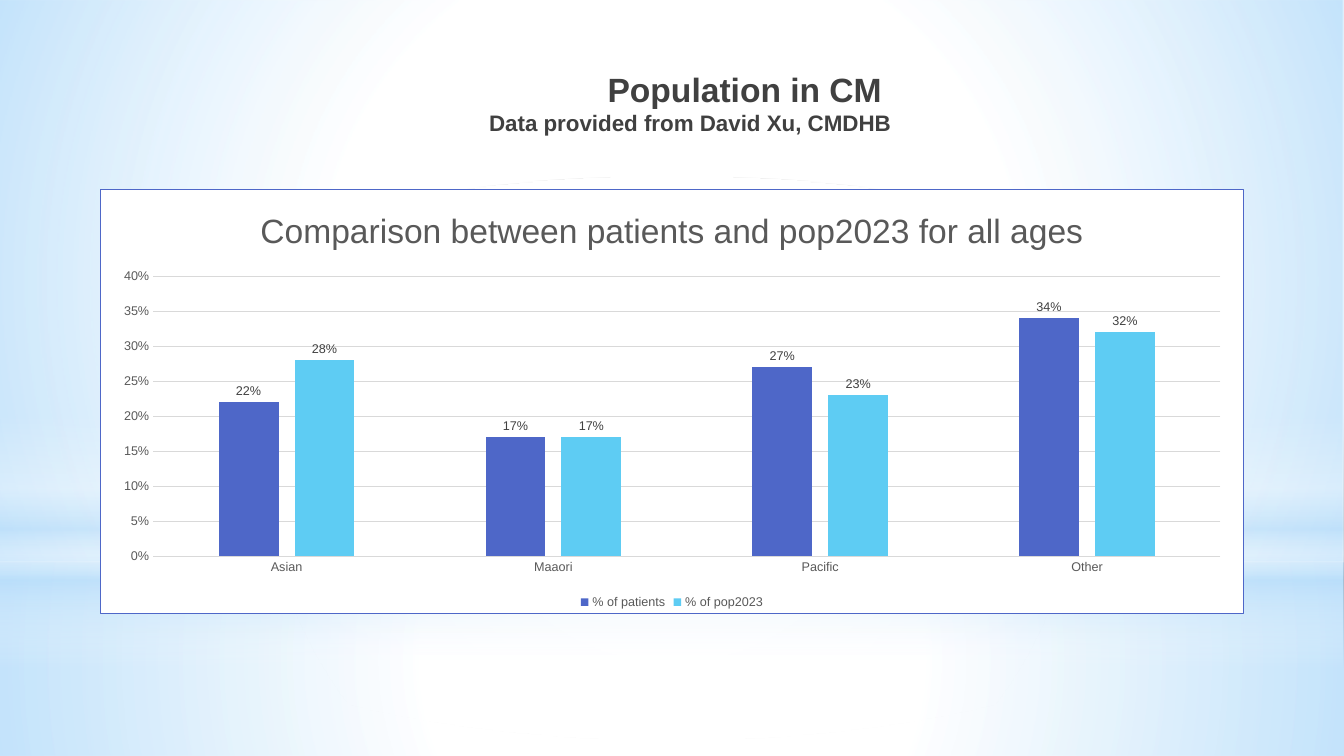
from lxml.etree import SubElement
from pptx import Presentation
from pptx.chart.data import CategoryChartData
from pptx.dml.color import RGBColor
from pptx.enum.chart import XL_CHART_TYPE, XL_LABEL_POSITION, XL_LEGEND_POSITION, XL_TICK_MARK
from pptx.enum.shapes import MSO_SHAPE
from pptx.enum.text import MSO_ANCHOR, PP_ALIGN
from pptx.oxml import parse_xml
from pptx.oxml.ns import nsdecls, qn
from pptx.util import Pt

FONT = "Arial"
WHITE = RGBColor(0xFF, 0xFF, 0xFF)
SKY = RGBColor(0xB4, 0xDC, 0xFA)
INDIGO = RGBColor(0x4E, 0x67, 0xC8)
CYAN = RGBColor(0x5E, 0xCC, 0xF3)
DARK_GREY = RGBColor(0x40, 0x40, 0x40)
MID_GREY = RGBColor(0x59, 0x59, 0x59)
GRID_GREY = RGBColor(0xD9, 0xD9, 0xD9)

ETHNICITIES = ["Asian", "Maaori", "Pacific", "Other"]
SHARES = [
    ("% of patients", [0.22, 0.17, 0.27, 0.34], INDIGO),
    ("% of pop2023", [0.28, 0.17, 0.23, 0.32], CYAN),
]


def add_glow(slide, preset, box, stops, angle=None):
    """Borderless shape with a fading gradient: linear with an angle, else radial."""
    glow = slide.shapes.add_shape(preset, *map(Pt, box))
    glow.shadow.inherit = False
    glow.line.fill.background()
    gradient = parse_xml(f'<a:gradFill rotWithShape="1" {nsdecls("a")}/>')
    stop_list = SubElement(gradient, qn("a:gsLst"))
    for position, color, opacity in stops:
        stop = SubElement(stop_list, qn("a:gs"), pos=str(position * 1000))
        tint = SubElement(stop, qn("a:srgbClr"), val=str(color))
        SubElement(tint, qn("a:alpha"), val=str(opacity * 1000))
    if angle is None:
        radial = SubElement(gradient, qn("a:path"))
        radial.set("path", "circle")
        SubElement(radial, qn("a:fillToRect"), dict.fromkeys("ltrb", "50000"))
    else:
        SubElement(gradient, qn("a:lin"), ang=str(angle * 60000), scaled="0")
    glow._element.spPr.find(qn("a:prstGeom")).addnext(gradient)


def style_font(font, size, color, bold=False):
    font.name = FONT
    font.size = Pt(size)
    font.bold = bold
    font.color.rgb = color


def add_heading(slide):
    heading = slide.shapes.add_textbox(Pt(-157.7), Pt(12.2), Pt(801.4), Pt(122.4))
    frame = heading.text_frame
    frame.word_wrap = True
    frame.vertical_anchor = MSO_ANCHOR.MIDDLE
    paragraph = frame.paragraphs[0]
    paragraph.alignment = PP_ALIGN.RIGHT
    topic = paragraph.add_run()
    topic.text = "Population in CM "
    style_font(topic.font, 24, DARK_GREY, bold=True)
    paragraph.add_line_break()
    credit = paragraph.add_run()
    credit.text = "Data provided from David Xu, CMDHB"
    style_font(credit.font, 16, DARK_GREY, bold=True)


def style_axis(axis):
    axis.major_tick_mark = axis.minor_tick_mark = XL_TICK_MARK.NONE
    style_font(axis.tick_labels.font, 9, MID_GREY)


def style_rule(line):
    line.color.rgb = GRID_GREY
    line.width = Pt(0.75)


def frame_chart(chart):
    """White chart area with a thin border, and a fixed inner plot area."""
    chart._chartSpace.chart.addnext(parse_xml(
        f'<c:spPr {nsdecls("c", "a")}>'
        f'<a:solidFill><a:srgbClr val="{WHITE}"/></a:solidFill>'
        f'<a:ln w="{Pt(0.75)}"><a:solidFill><a:srgbClr val="{INDIGO}"/></a:solidFill></a:ln>'
        '</c:spPr>'))
    plot_area = chart._chartSpace.chart.plotArea
    for layout in plot_area.findall(qn("c:layout")):
        plot_area.remove(layout)
    layout = parse_xml(f'<c:layout {nsdecls("c")}><c:manualLayout/></c:layout>')
    settings = [("layoutTarget", "inner"), ("xMode", "edge"), ("yMode", "edge"),
                ("x", "0.046"), ("y", "0.205"), ("w", "0.934"), ("h", "0.66")]
    for name, value in settings:
        SubElement(layout[0], qn(f"c:{name}"), val=value)
    plot_area.insert(0, layout)


def add_comparison_chart(slide):
    data = CategoryChartData(number_format="0%")
    data.categories = ETHNICITIES
    for name, shares, _ in SHARES:
        data.add_series(name, shares)
    chart = slide.shapes.add_chart(XL_CHART_TYPE.COLUMN_CLUSTERED, Pt(71.5), Pt(135),
                                   Pt(817), Pt(303.5), data).chart
    chart.font.name = FONT
    chart.font.size = Pt(10)

    # Title and legend
    title = chart.chart_title.text_frame.paragraphs[0].add_run()
    title.text = "Comparison between patients and pop2023 for all ages"
    style_font(title.font, 24, MID_GREY)
    chart.chart_title.include_in_layout = False
    chart.has_legend = True
    chart.legend.position = XL_LEGEND_POSITION.BOTTOM
    chart.legend.include_in_layout = False
    style_font(chart.legend.font, 9, MID_GREY)

    # Axes
    style_axis(chart.category_axis)
    style_rule(chart.category_axis.format.line)
    percent_axis = chart.value_axis
    style_axis(percent_axis)
    percent_axis.format.line.fill.background()
    style_rule(percent_axis.major_gridlines.format.line)
    percent_axis.minimum_scale, percent_axis.maximum_scale = 0, 0.4
    percent_axis.major_unit = 0.05
    percent_axis.tick_labels.number_format = "0%"
    percent_axis.tick_labels.number_format_is_linked = False

    # Columns and their labels
    columns = chart.plots[0]
    columns.gap_width = 219
    columns.overlap = -27
    columns.vary_by_categories = False
    for series, (_, _, color) in zip(columns.series, SHARES):
        series.format.fill.solid()
        series.format.fill.fore_color.rgb = color
        labels = series.data_labels
        labels.show_value = True
        labels.number_format = "0%"
        labels.number_format_is_linked = False
        labels.position = XL_LABEL_POSITION.OUTSIDE_END
        style_font(labels.font, 9, DARK_GREY)
    frame_chart(chart)


def main():
    deck = Presentation()
    deck.slide_width, deck.slide_height = Pt(960), Pt(540)
    slide = deck.slides.add_slide(deck.slide_layouts[6])

    # Backdrop: floor, sky, horizon band and central light
    add_glow(slide, MSO_SHAPE.RECTANGLE, (0, 402, 960, 138),
             [(0, WHITE, 91), (37, WHITE, 76), (100, SKY, 79)])
    add_glow(slide, MSO_SHAPE.RECTANGLE, (0, 0, 960, 402),
             [(0, WHITE, 89), (48, WHITE, 62), (100, SKY, 79)])
    add_glow(slide, MSO_SHAPE.RECTANGLE, (0, 296.5, 960, 180),
             [(0, WHITE, 0), (29, WHITE, 30), (45, SKY, 40),
              (55, WHITE, 26), (65, SKY, 60), (100, WHITE, 0)], angle=90)
    add_glow(slide, MSO_SHAPE.OVAL, (0, 126, 960, 402),
             [(0, WHITE, 100), (56, WHITE, 0)])

    add_heading(slide)
    add_comparison_chart(slide)
    deck.save("out.pptx")


if __name__ == "__main__":
    main()
